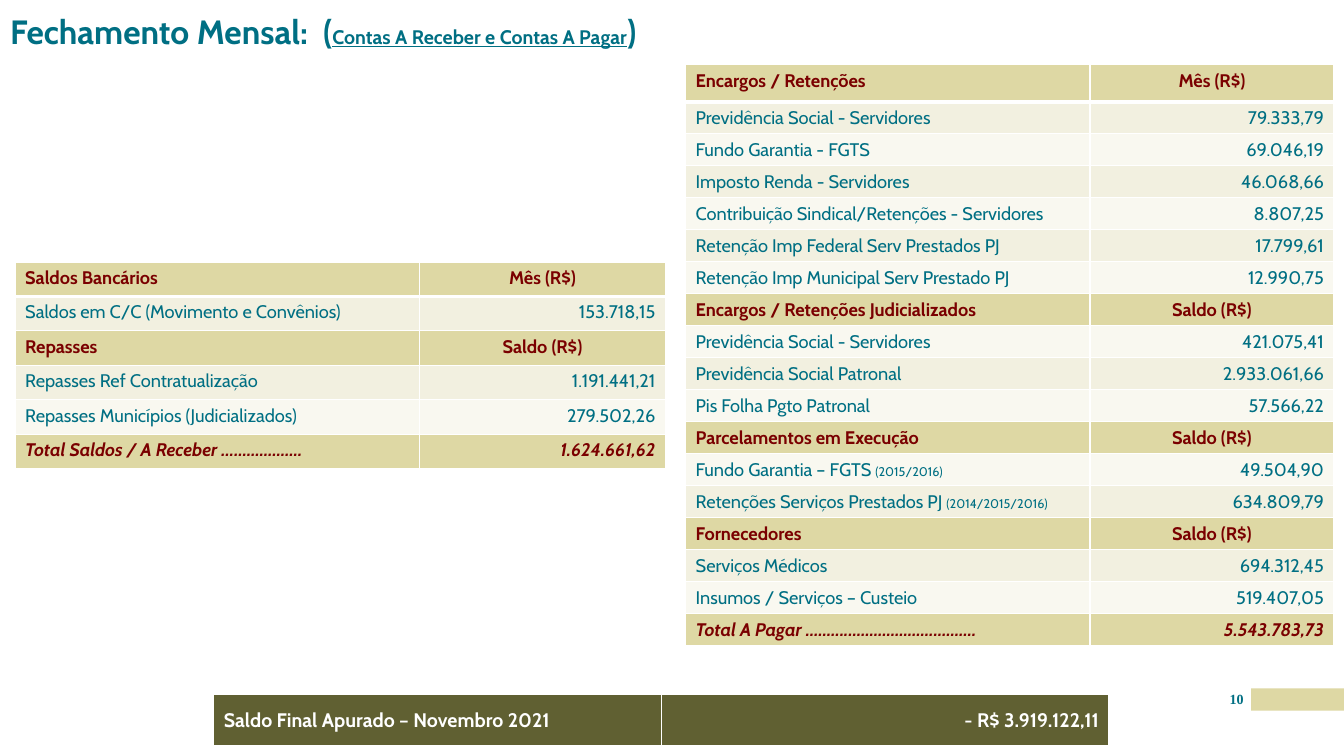
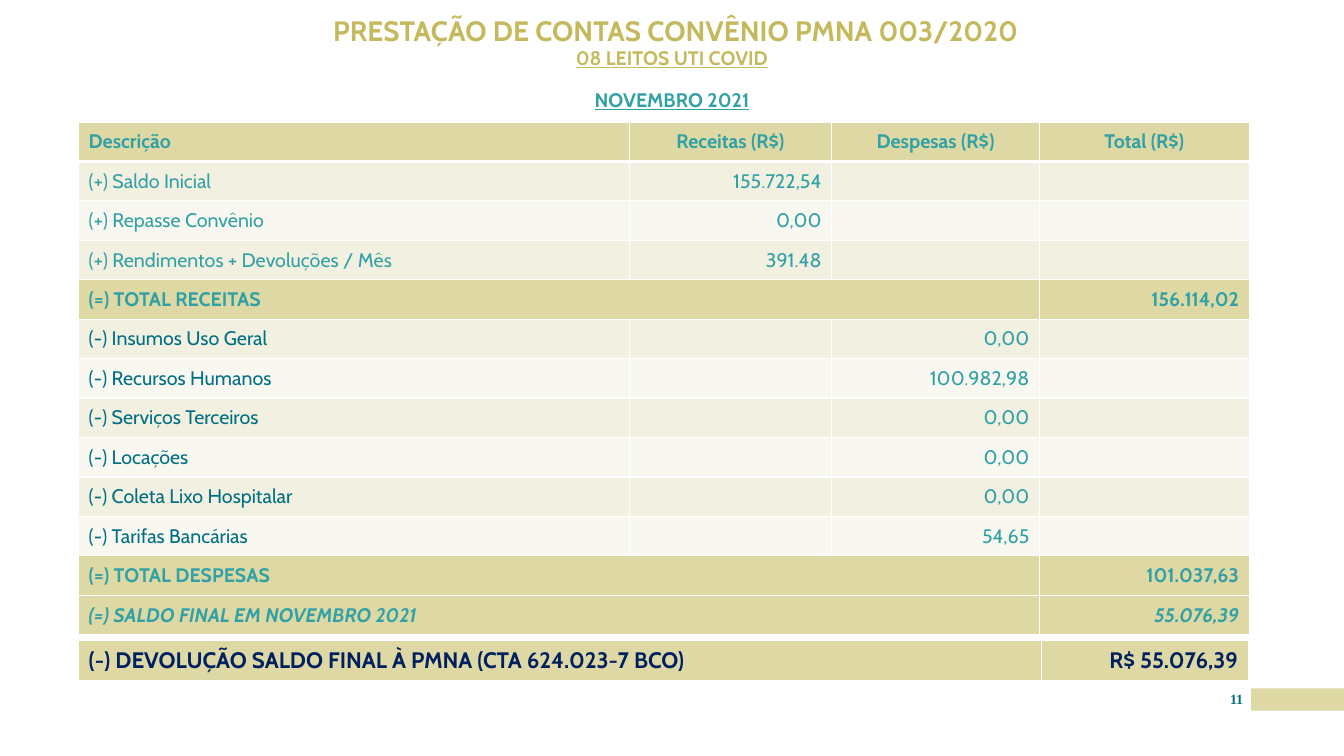
from dataclasses import dataclass

from lxml import etree
from pptx import Presentation
from pptx.dml.color import RGBColor
from pptx.enum.shapes import MSO_SHAPE
from pptx.enum.text import MSO_ANCHOR, PP_ALIGN
from pptx.oxml.ns import qn
from pptx.util import Inches, Pt

RECT = MSO_SHAPE.RECTANGLE
TOP, MIDDLE = MSO_ANCHOR.TOP, MSO_ANCHOR.MIDDLE
LEFT, CENTER, RIGHT = PP_ALIGN.LEFT, PP_ALIGN.CENTER, PP_ALIGN.RIGHT


@dataclass(frozen=True)
class Theme:
    font: str = "Cabin"
    number_font: str = "Times New Roman"
    teal: str = "006F83"
    mint: str = "32A1A6"
    wine: str = "7A0000"
    navy: str = "002060"
    gold: str = "C4BA5D"
    sand: str = "DED8A4"
    olive: str = "606032"
    white: str = "FFFFFF"
    bands: tuple = ("F9F8F0", "F2F0E0")
    title: int = 24
    heading: int = 20
    closing: int = 16
    text: int = 14
    dense: int = 13
    number: int = 10
    note: int = 9


T = Theme()

PAYABLES = [
    ("head", "Encargos / Retenções", "Mês (R$)"),
    ("line", "Previdência Social - Servidores", "79.333,79"),
    ("line", "Fundo Garantia - FGTS", "69.046,19"),
    ("line", "Imposto Renda - Servidores", "46.068,66"),
    ("line", "Contribuição Sindical/Retenções - Servidores", "8.807,25"),
    ("line", "Retenção Imp Federal Serv Prestados PJ", "17.799,61"),
    ("line", "Retenção Imp Municipal Serv Prestado PJ", "12.990,75"),
    ("head", "Encargos / Retenções Judicializados", "Saldo (R$)"),
    ("line", "Previdência Social - Servidores", "421.075,41"),
    ("line", "Previdência Social Patronal", "2.933.061,66"),
    ("line", "Pis Folha Pgto Patronal", "57.566,22"),
    ("head", "Parcelamentos em Execução", "Saldo (R$)"),
    ("line", "Fundo Garantia – FGTS |(2015/2016)", "49.504,90"),
    ("line", "Retenções Serviços Prestados PJ |(2014/2015/2016)", "634.809,79"),
    ("head", "Fornecedores", "Saldo (R$)"),
    ("line", "Serviços Médicos", "694.312,45"),
    ("line", "Insumos / Serviços – Custeio", "519.407,05"),
    ("total", "Total A Pagar ........................................",
     "5.543.783,73"),
]
RECEIVABLES = [
    ("head", "Saldos Bancários", "Mês (R$)"),
    ("line", "Saldos em C/C (Movimento e Convênios)", "153.718,15"),
    ("head", "Repasses", "Saldo (R$)"),
    ("line", "Repasses Ref Contratualização", "1.191.441,21"),
    ("line", "Repasses Municípios (Judicializados)", "279.502,26"),
    ("total", "Total Saldos / A Receber ...................", "1.624.661,62"),
]
AGREEMENT = [
    ("head", "Descrição", "Receitas (R$)", "Despesas (R$)", "Total (R$)"),
    ("line", "(+) Saldo Inicial", "155.722,54", "", ""),
    ("line", "(+) Repasse Convênio", "0,00", "", ""),
    ("line", "(+) Rendimentos + Devoluções / Mês", "391.48", "", ""),
    ("sum", "(=) TOTAL RECEITAS", "156.114,02"),
    ("cost", "(-) Insumos Uso Geral", "", "0,00", ""),
    ("cost", "(-) Recursos Humanos", "", "100.982,98", ""),
    ("cost", "(-) Serviços Terceiros", "", "0,00", ""),
    ("cost", "(-) Locações", "", "0,00", ""),
    ("cost", "(-) Coleta Lixo Hospitalar", "", "0,00", ""),
    ("cost", "(-) Tarifas Bancárias", "", "54,65", ""),
    ("sum", "(=) TOTAL DESPESAS", "101.037,63"),
    ("total", "(=) SALDO FINAL EM NOVEMBRO 2021", "55.076,39"),
]
MONTH_BALANCE = [("sum", "Saldo Final Apurado – Novembro 2021", "- R$ 3.919.122,11")]
REFUND = [("sum", "(-) DEVOLUÇÃO SALDO FINAL À PMNA (CTA 624.023-7 BCO)",
           "R$ 55.076,39")]


def add_run(p, text, color, **formats):
    r = p.add_run()
    r.text = text
    for name, value in {"name": T.font, **formats}.items():
        setattr(r.font, name, value)
    r.font.color.rgb = RGBColor.from_string(color)


def add_text(s, box, paragraphs, align, line_spacing=1.0):
    tf = s.shapes.add_textbox(*map(Inches, box)).text_frame
    tf.word_wrap = True
    for side in ("left", "top", "right", "bottom"):
        setattr(tf, f"margin_{side}", 0)
    for i, (space, runs) in enumerate(paragraphs):
        p = tf.add_paragraph() if i else tf.paragraphs[0]
        p.alignment, p.line_spacing, p.space_before = align, line_spacing, Pt(space)
        for text, size, color, underline in runs:
            add_run(p, text, color, size=Pt(size), bold=True, underline=underline)
    return tf


def add_footer(s, number):
    band = s.shapes.add_shape(RECT, *map(Inches, (12.41, 6.83, 0.92, 0.22)))
    band.shadow.inherit = False
    band.fill.solid()
    band.fill.fore_color.rgb = RGBColor.from_string(T.sand)
    band.line.fill.background()
    tf = add_text(s, (12.12, 6.85, 0.29, 0.25),
                  [(0, [(number, T.number, T.teal, False)])], CENTER)
    tf.paragraphs[0].runs[0].font.name = T.number_font


def set_borders(cell, widths):
    tcPr = cell._tc.get_or_add_tcPr()
    for i, (side, width) in enumerate(zip("LRTB", widths)):
        ln = etree.Element(qn(f"a:ln{side}"), w=str(Pt(width)))
        fill = etree.SubElement(ln, qn("a:solidFill"))
        etree.SubElement(fill, qn("a:srgbClr"), val=T.white)
        tcPr.insert(i, ln)


def fill_cell(cell, text, size, color, align, bold, italic):
    p = cell.text_frame.paragraphs[0]
    p.alignment = align
    if not text:
        p._p.get_or_add_endParaRPr().set("sz", str(size * 100))
        return
    for i, part in enumerate(text.split("|")):
        add_run(p, part, color, size=Pt(T.note if i else size),
                bold=bold, italic=italic)


def add_ledger(s, box, widths, rows, size, accent, body=T.teal,
               strong=T.sand, anchor=MIDDLE):
    last = len(widths) - 1
    table = s.shapes.add_table(len(rows), last + 1, *map(Inches, box)).table
    table.first_row = table.horz_banding = False
    for column, w in zip(table.columns, widths):
        column.width = Inches(w)
    for y, (kind, label, *values) in enumerate(rows):
        plain = kind in ("line", "cost")
        cells = [label, *values]
        if len(cells) <= last:
            cells[1:1] = [""] * (last + 1 - len(cells))
            table.cell(y, 0).merge(table.cell(y, last - 1))
        for x, text in enumerate(cells):
            cell = table.cell(y, x)
            cell.vertical_anchor = anchor
            set_borders(cell, (1, 1, 3 if y == 1 else 1, 3 if y == 0 else 1))
            cell.fill.solid()
            cell.fill.fore_color.rgb = RGBColor.from_string(
                T.bands[y % 2] if plain else strong)
            color = body if plain else accent
            if kind == "cost" and x == 0:
                color = T.teal
            align = LEFT if x == 0 else CENTER if kind == "head" else RIGHT
            fill_cell(cell, text, size, color, align, not plain, kind == "total")
    return table


def set_row_heights(table, first, other):
    for y, row in enumerate(table.rows):
        row.height = Inches(other if y else first)


def build_month_closing(s):
    add_text(s, (0.1, 0.15, 13.01, 0.5), [(0, [
        ("Fechamento Mensal:  (", T.title, T.teal, False),
        ("Contas A Receber e Contas A Pagar", T.text, T.teal, True),
        (")", T.title, T.teal, False)])], LEFT, 0.9)
    payables = add_ledger(s, (6.8, 0.64, 6.43, 5.75), (4.01, 2.42), PAYABLES,
                          T.dense, T.wine, anchor=TOP)
    set_row_heights(payables, 0.37, 0.31)
    add_ledger(s, (0.15, 2.6, 6.45, 2.05), (4.01, 2.44), RECEIVABLES,
               T.dense, T.wine, anchor=TOP)
    add_ledger(s, (2.12, 6.89, 8.88, 0.52), (4.44, 4.44), MONTH_BALANCE,
               T.text, T.white, strong=T.olive)
    add_footer(s, "10")


def build_agreement(s):
    add_text(s, (0, 0.12, 13.33, 1.52), [
        (0, [(" ", T.title, T.gold, False),
             ("PRESTAÇÃO DE CONTAS CONVÊNIO PMNA 003/2020", T.heading, T.gold, False)]),
        (0, [("08 LEITOS UTI COVID", T.text, T.gold, True)]),
        (15, [("NOVEMBRO 2021", T.text, T.mint, True)])], CENTER, 0.9)
    add_ledger(s, (0.78, 1.21, 11.61, 5.09), (5.46, 2.01, 2.06, 2.08), AGREEMENT,
               T.text, T.mint, T.mint)
    add_ledger(s, (0.78, 6.35, 11.6, 0.41), (9.55, 2.05), REFUND,
               T.closing, T.navy)
    add_footer(s, "11")


def main():
    prs = Presentation()
    prs.slide_width, prs.slide_height = Inches(13.33), Inches(7.5)
    for build in (build_month_closing, build_agreement):
        build(prs.slides.add_slide(prs.slide_layouts[6]))
    prs.save("out.pptx")


if __name__ == "__main__":
    main()
